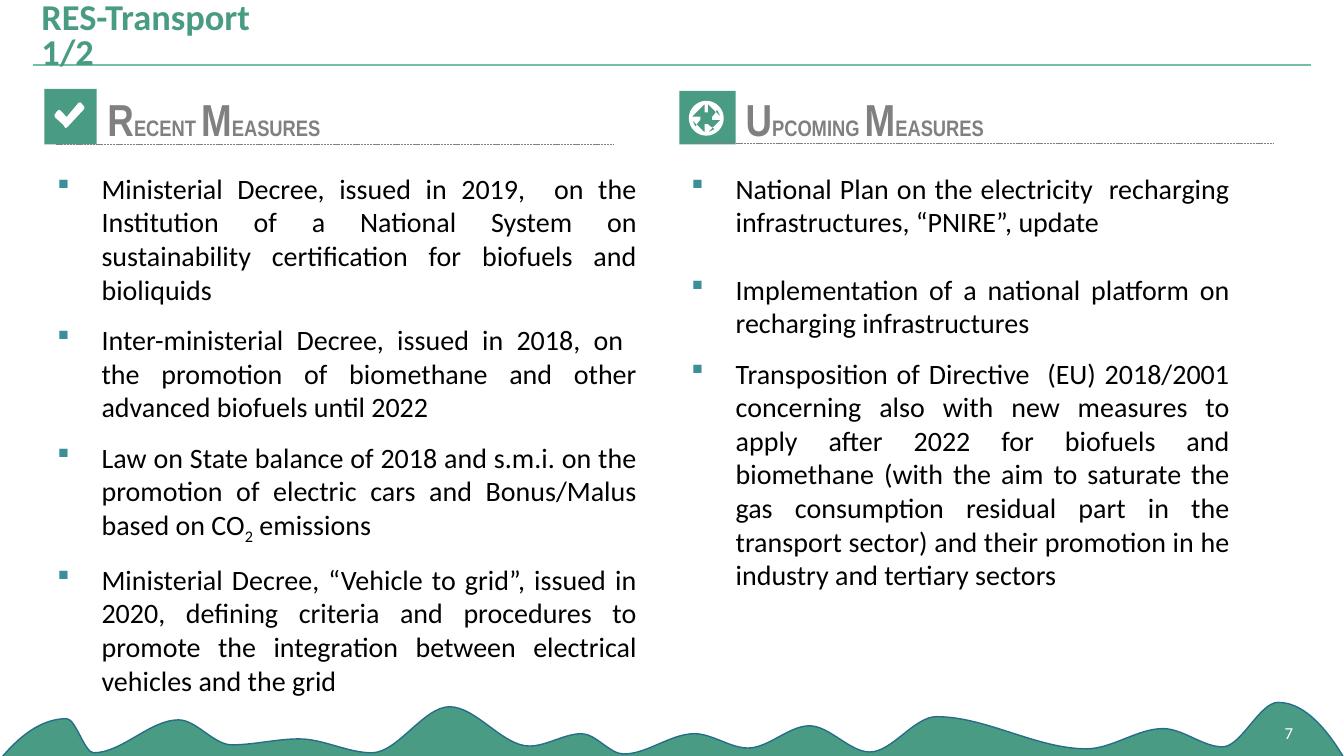
from lxml.etree import SubElement
from pptx import Presentation
from pptx.dml.color import RGBColor
from pptx.enum.dml import MSO_LINE as Dash
from pptx.enum.shapes import MSO_CONNECTOR as Link, MSO_SHAPE as Shape
from pptx.enum.text import MSO_ANCHOR as Anchor, PP_ALIGN as Align
from pptx.oxml.ns import qn
from pptx.util import Cm, Pt

GREEN = RGBColor(0x4A, 0x9B, 0x83)
MINT = RGBColor(0x75, 0xBD, 0xA7)
BLUE = RGBColor(0x26, 0x6D, 0x8A)
GREY = RGBColor(0x80, 0x80, 0x80)
WHITE = RGBColor(0xFF, 0xFF, 0xFF)
BLACK = RGBColor(0, 0, 0)


def paint(shape, color):
    shape.shadow.inherit = False
    shape.fill.solid()
    shape.fill.fore_color.rgb = color
    shape.line.fill.background()
    return shape


def style(run, size, color, bold=False, face="Calibri"):
    run.font.name = face
    run.font.size = Pt(size)
    run.font.bold = bold
    run.font.color.rgb = color


deck = Presentation()
deck.slide_width, deck.slide_height = Cm(33.87), Cm(19.05)
slide = deck.slides.add_slide(deck.slide_layouts[5])
shapes = slide.shapes

for x, y, w, h in [(1.12, 2.24, 1.32, 1.4), (17.12, 2.29, 1.42, 1.35)]:
    paint(shapes.add_shape(Shape.RECTANGLE, Cm(x), Cm(y), Cm(w), Cm(h)), GREEN)

crests = [
    (0.05, 19.08), (1.68, 18.11), (2.36, 18.97), (4.5, 18.14), (5.84, 18.77),
    (7.54, 18.62), (9.37, 18.97), (11.33, 17.81), (13.34, 18.8), (14.66, 18.49),
    (15.72, 19), (17.5, 18.49), (18.85, 18.85), (20.4, 18.29), (21.92, 18.95),
    (23.6, 18.06), (27.38, 18.87), (29.31, 18.36), (30.81, 18.82), (32.21, 17.7),
    (33.86, 19.08),
]
wave = [crests[0]]
for (xa, ya), (xb, yb) in zip(crests, crests[1:]):
    dx, dy = (xb - xa) / 3, (yb - ya) / 3
    rise = 2 * dy if xa == crests[0][0] else 0
    fall = 2 * dy if xb == crests[-1][0] else 0
    wave.append((xa + dx, ya + rise, xb - dx, yb - fall, xb, yb))

tick = [
    (2.13, 2.74), (1.7, 3.2), (1.65, 3.23), (1.59, 3.14), (1.39, 2.96),
    (1.37, 2.9), (1.45, 2.79), (1.5, 2.77), (1.53, 2.79), (1.68, 2.95),
    (1.98, 2.59), (2.03, 2.58), (2.12, 2.68),
]

rim = [(0, -0.44)]
hole = [(-0.04, -0.36)]
rim_turn = [(0.24, -0.44, 0.44, -0.24, 0.44, 0)]
hole_turn = [(-0.04, -0.15), (0.04, -0.15), (0.04, -0.36), (0.21, -0.33, 0.33, -0.21, 0.36, -0.04)]
for turn in range(4):
    for ring, part in [(rim, rim_turn), (hole, hole_turn)]:
        ring += part
        part[:] = [
            tuple(v for x, y in zip(row[::2], row[1::2]) for v in (-y, x))
            for row in part
        ]
target = [
    [tuple(v + (2.98 if i % 2 else 17.8) for i, v in enumerate(row)) for row in ring]
    for ring in (rim, hole)
]

for rings, color in [([wave], GREEN), ([tick], WHITE), (target, WHITE)]:
    pen = shapes.build_freeform(Cm(rings[0][0][0]), Cm(rings[0][0][1]))
    for ring in rings:
        if ring is not rings[0]:
            pen.move_to(Cm(ring[0][0]), Cm(ring[0][1]))
        ends = [(Cm(row[-2]), Cm(row[-1])) for row in ring[1:]]
        pen.add_line_segments(ends, close=color == WHITE)
    form = paint(pen.convert_to_shape(), color)
    if color == GREEN:
        form.line.color.rgb = BLUE
        form.line.width = Pt(1)
    moves = [row for ring in rings for row in ring[1:] + [ring[0]] * (color == WHITE)]
    for node, row in zip(list(form._element.iter(qn("a:lnTo"))), moves):
        if len(row) == 6:
            node.tag = qn("a:cubicBezTo")
            for i in (0, 2):
                spot = SubElement(node, qn("a:pt"))
                spot.set("x", str(Cm(row[i]) - form.left))
                spot.set("y", str(Cm(row[i + 1]) - form.top))
            node.append(node[0])

for xa, xb, y, color, width, dash in [
    (0.84, 33.05, 1.63, MINT, 1.5, Dash.SOLID),
    (1.4, 15.47, 3.63, GREY, 0.5, Dash.SQUARE_DOT),
    (17.53, 32.11, 3.61, GREY, 0.5, Dash.SQUARE_DOT),
]:
    rule = shapes.add_connector(Link.STRAIGHT, Cm(xa), Cm(y), Cm(xb), Cm(y))
    rule.line.color.rgb = color
    rule.line.width = Pt(width)
    rule.line.dash_style = dash
    SubElement(rule._element.spPr, qn("a:effectLst"))

title = shapes.title
shapes._spTree.append(title._element)
title.left, title.top, title.width, title.height = Cm(0.79), Cm(0.38), Cm(32.23), Cm(1.12)
title.text_frame.text = "RES-Transport\v1/2"
title.text_frame.vertical_anchor = Anchor.MIDDLE
head = title.text_frame.paragraphs[0]
head.alignment = Align.LEFT
head.line_spacing = 0.8
head.space_after = Pt(4)
for run in head.runs:
    style(run, 26, GREEN, True)

for x, words in [
    (2.46, ["R", "ECENT ", "M", "EASURES"]),
    (18.54, ["U", "PCOMING ", "M", "EASURES"]),
]:
    box = shapes.add_textbox(Cm(x), Cm(2.18), Cm(8.99), Cm(1.63))
    box.text_frame.word_wrap = True
    box.text_frame.vertical_anchor = Anchor.MIDDLE
    for word in words:
        run = box.text_frame.paragraphs[0].add_run()
        run.text = word
        style(run, 32 if len(word) == 1 else 16, GREY, True, "Arial Narrow")

recent = [
    (0, ["Ministerial Decree, issued in 2019,  on the Institution of a National System on sustainability certification for biofuels and bioliquids "]),
    (12, ["Inter-ministerial Decree, issued in 2018, on  the promotion of biomethane and other advanced biofuels until 2022"]),
    (12, ["Law on State balance of 2018 and s.m.i. on the promotion of electric cars and Bonus/Malus based on CO", "2", " emissions"]),
    (12, ["Ministerial Decree, “Vehicle to grid”, issued in 2020, defining criteria and procedures to promote the integration between electrical vehicles and the grid"]),
]
coming = [
    (0, ["National Plan on the electricity  recharging infrastructures, “PNIRE”, update"]),
    (24, ["Implementation of a national platform on recharging infrastructures"]),
    (12, ["Transposition of Directive  (EU) 2018/2001 concerning also with new measures to apply after 2022 for biofuels and biomethane (with the aim to saturate the gas consumption residual part in the transport sector) and their promotion in he industry and tertiary sectors"]),
]
left = shapes.add_textbox(Cm(1.19), Cm(4.19), Cm(15.11), Cm(13.51))
right = shapes.add_shape(Shape.RECTANGLE, Cm(17.17), Cm(4.19), Cm(14.07), Cm(11.63))
paint(right, WHITE)
for box, items in [(left, recent), (right, coming)]:
    frame = box.text_frame
    frame.word_wrap = True
    frame.vertical_anchor = Anchor.TOP
    for i, (gap, parts) in enumerate(items):
        para = frame.add_paragraph() if i else frame.paragraphs[0]
        para.alignment = Align.JUSTIFY
        para.space_before = Pt(gap)
        for part in parts:
            run = para.add_run()
            run.text = part
            style(run, 20, BLACK)
            if part == "2":
                run.font._element.set("baseline", "-25000")
        props = para._p.get_or_add_pPr()
        props.set("marL", str(Cm(1.12)))
        props.set("indent", str(-Cm(1.12)))
        tint = SubElement(props, qn("a:buClr"))
        SubElement(tint, qn("a:srgbClr"), val="3A8F98")
        SubElement(props, qn("a:buFont"), typeface="Wingdings")
        SubElement(props, qn("a:buChar"), char="§")

box = shapes.add_textbox(Cm(25.22), Cm(17.96), Cm(7.62), Cm(1.02))
box.text_frame.text = "7"
box.text_frame.word_wrap = True
box.text_frame.vertical_anchor = Anchor.MIDDLE
box.text_frame.paragraphs[0].alignment = Align.RIGHT
style(box.text_frame.paragraphs[0].runs[0], 12, WHITE)

deck.save("out.pptx")
